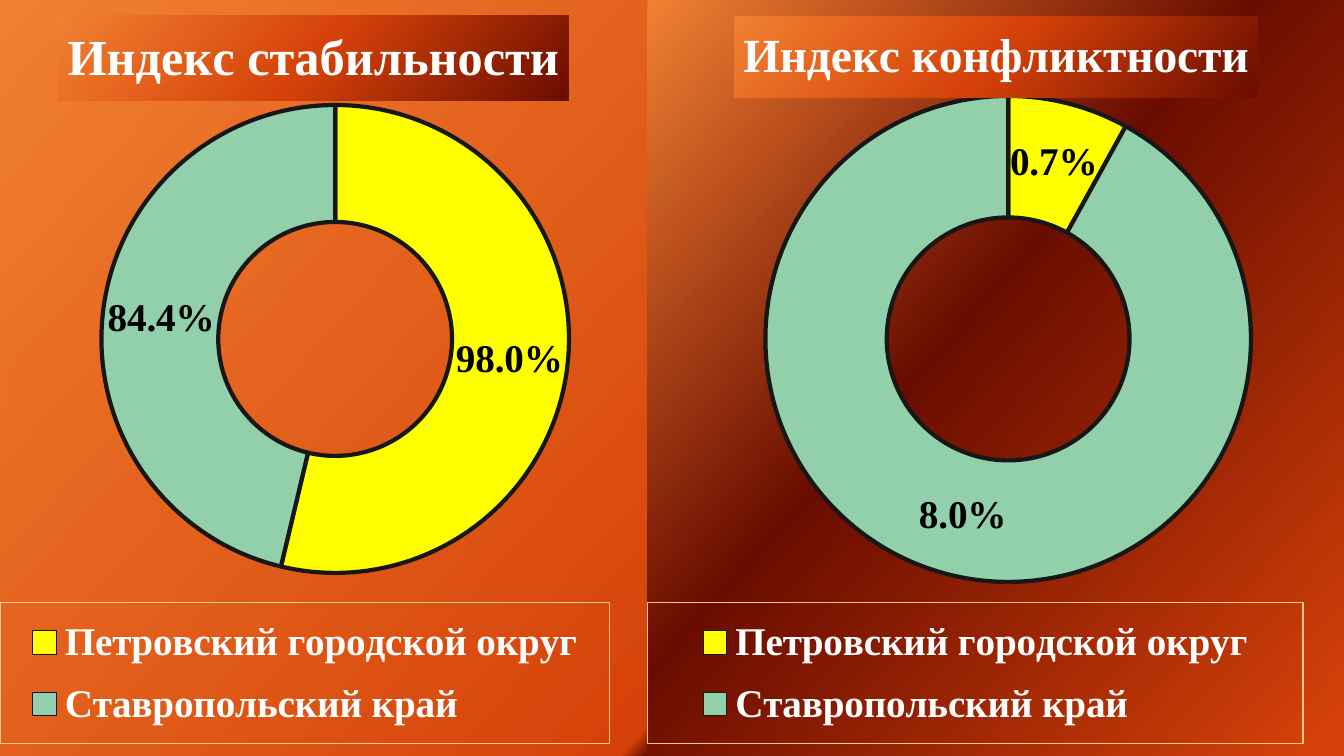
from lxml import etree
from pptx import Presentation
from pptx import util as u
from pptx.chart.data import CategoryChartData
from pptx.dml.color import RGBColor
from pptx.enum import chart as charts
from pptx.oxml import parse_xml
from pptx.oxml.ns import nsdecls, qn

PX = 914400 / 100.8
WIDTH, HEIGHT = 1344, 756
COLORS = {
    "orange": "F18031", "rust": "D54209", "maroon": "6A0D00",
    "yellow": "FFFF00", "green": "92D0AB", "outline": "181717",
    "frame": "F8C890", "white": "FFFFFF", "black": "000000",
}
BLEND = [(0, "orange"), (50, "rust"), (100, "maroon")]
REGIONS = ["Петровский городской округ", "Ставропольский край"]


def gradient(stops):
    """Return a linear gradient fill element for (percent, color name) stops."""
    marks = "".join(
        f'<a:gs pos="{pos * 1000}"><a:srgbClr val="{COLORS[name]}"/></a:gs>'
        for pos, name in stops)
    return parse_xml(
        f'<a:gradFill {nsdecls("a")} rotWithShape="1"><a:gsLst>{marks}</a:gsLst>'
        f'<a:lin ang="{42 * 60000}" scaled="0"/></a:gradFill>')


def style(font, size, color="white", bold=True, name="Times New Roman"):
    font.size, font.bold, font.name = u.Pt(size), bold, name
    font.color.rgb = RGBColor.from_string(COLORS[color])


deck = Presentation()
deck.slide_width, deck.slide_height = u.Emu(round(WIDTH * PX)), u.Emu(round(HEIGHT * PX))
page = deck.slides.add_slide(deck.slide_layouts[6])
page.background.fill.solid()
backdrop = page.background.fill._xPr
backdrop.replace(backdrop[0], gradient(BLEND))

# Boxes are left, top, width, height in px inside each chart
panels = [
    dict(left=0, width=647, title="Индекс стабильности", size=36,
         series="Индекс стабильности", values=(0.98, 0.844),
         stops=[(0, "orange"), (98, "rust"), (100, "maroon")],
         title_box=(58, 15), plot_box=(101, 96, 468, 486), legend_box=(0, 603, 609, 141)),
    dict(left=647, width=697, title="Индекс конфликтности", size=34,
         series="Series 1", values=(0.007, 0.08),
         stops=[(0, "orange"), (44, "maroon"), (98, "rust")],
         title_box=(87, 16), plot_box=(109, 96, 504, 486), legend_box=(0, 603, 656, 141)),
]

for panel in panels:
    data = CategoryChartData(number_format="0.0%")
    data.categories = REGIONS
    data.add_series(panel["series"], panel["values"])
    chart = page.shapes.add_chart(
        charts.XL_CHART_TYPE.DOUGHNUT, round(panel["left"] * PX), 0,
        round(panel["width"] * PX), round(HEIGHT * PX), data).chart
    style(chart.font, 10, bold=False, name="Karla")

    title = chart.chart_title
    span = title.text_frame.paragraphs[0].add_run()
    span.text = panel["title"]
    style(span.font, panel["size"])
    title.format.fill.solid()
    title_look = title._element.find(qn("c:spPr"))
    title_look.replace(title_look[0], gradient(BLEND))

    chart.has_legend = True
    legend = chart.legend
    legend.position = charts.XL_LEGEND_POSITION.BOTTOM
    legend.include_in_layout = False
    style(legend.font, 28)
    legend._element.find(qn("c:overlay")).addnext(parse_xml(
        f'<c:spPr {nsdecls("c", "a")}><a:noFill/><a:ln w="9525"><a:solidFill>'
        f'<a:srgbClr val="{COLORS["frame"]}"/></a:solidFill></a:ln></c:spPr>'))

    plot = chart.plots[0]
    plot.vary_by_categories = True
    ring = plot.series[0]
    for index, color in enumerate(("yellow", "green")):
        look = ring.points[index].format
        look.fill.solid()
        look.fill.fore_color.rgb = RGBColor.from_string(COLORS[color])
        look.line.color.rgb = RGBColor.from_string(COLORS["outline"])
        look.line.width = u.Pt(3)
    labels = ring.data_labels
    labels.show_value, labels.show_percentage = True, False
    labels.number_format, labels.number_format_is_linked = "0.0%", False
    style(labels.font, 28, "black")

    space = chart._chartSpace
    chart_look = parse_xml(f'<c:spPr {nsdecls("c", "a")}><a:ln><a:noFill/></a:ln></c:spPr>')
    chart_look.insert(0, gradient(panel["stops"]))
    space.find(qn("c:chart")).addnext(chart_look)

    plot_area = space.find(f'{qn("c:chart")}/{qn("c:plotArea")}')
    for owner, slot, box in ((title._element, 1, panel["title_box"]),
                             (plot_area, 0, panel["plot_box"]),
                             (legend._element, 1, panel["legend_box"])):
        for old in owner.findall(qn("c:layout")):
            owner.remove(old)
        layout = parse_xml(f'<c:layout {nsdecls("c")}><c:manualLayout/></c:layout>')
        settings = [("xMode", "edge"), ("yMode", "edge")]
        if owner is plot_area:
            settings.insert(0, ("layoutTarget", "inner"))
        sides = (panel["width"], HEIGHT) * 2
        settings += [(key, f"{length / side:.4f}")
                     for key, length, side in zip("xywh", box, sides)]
        for key, value in settings:
            etree.SubElement(layout[0], qn(f"c:{key}")).set("val", value)
        owner.insert(slot, layout)

deck.save("out.pptx")
